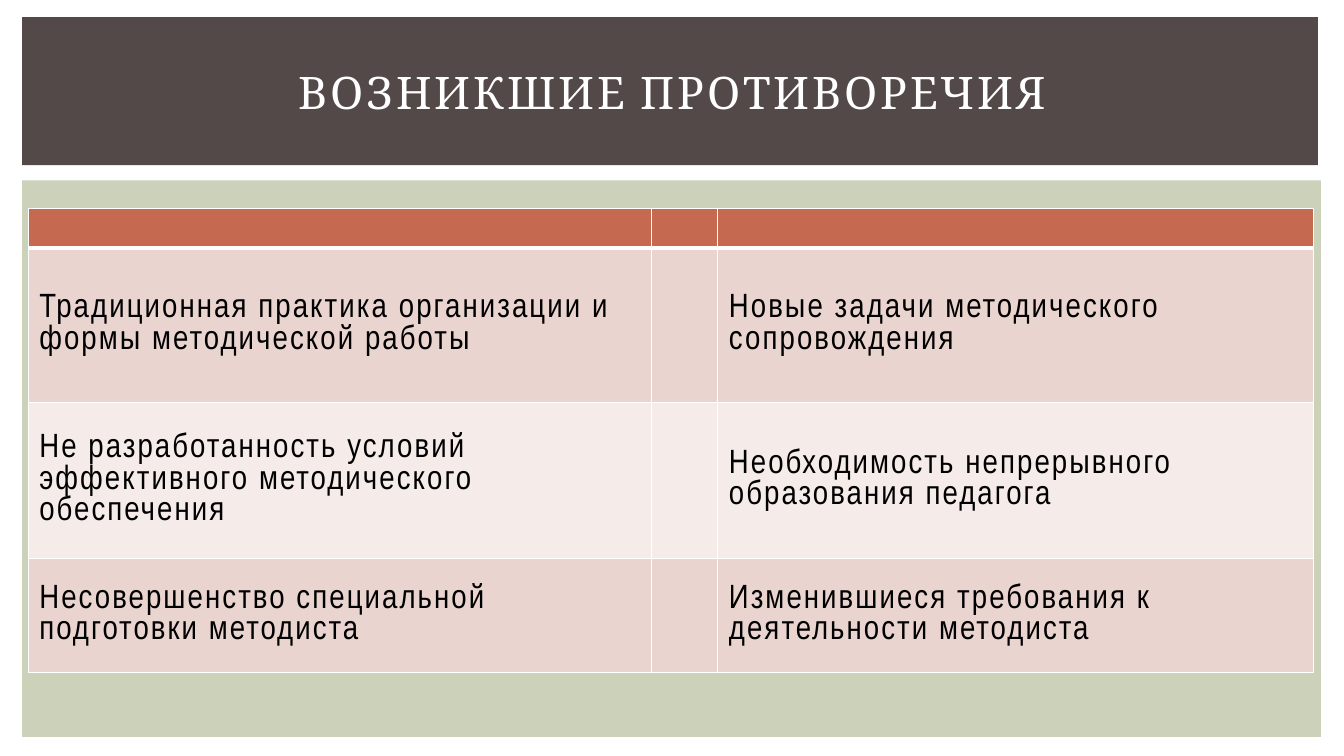
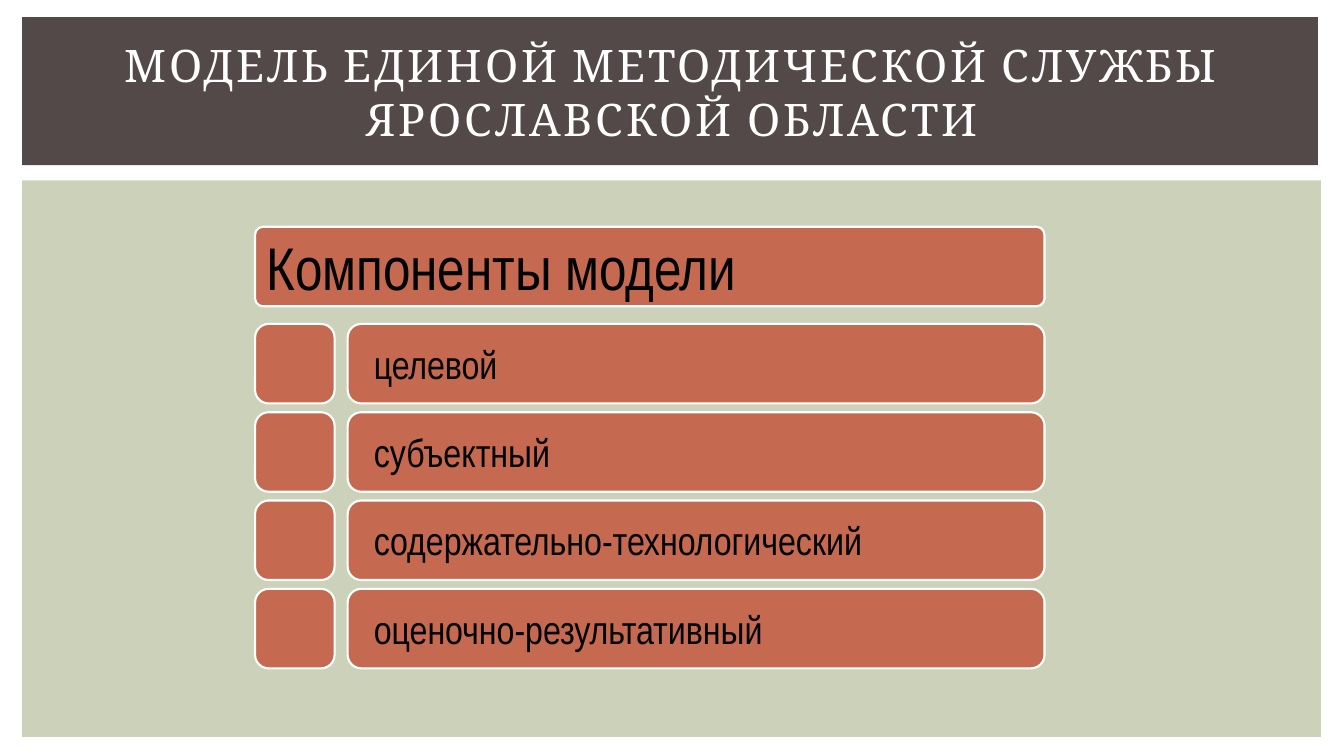
import collections

import pptx
import pptx.dml.color
import pptx.enum.shapes
import pptx.enum.text
import pptx.oxml
import pptx.oxml.ns
import pptx.util

RGBColor = pptx.dml.color.RGBColor
Inches = pptx.util.Inches
Pt = pptx.util.Pt
Shapes = pptx.enum.shapes.MSO_SHAPE
Align = pptx.enum.text.PP_ALIGN
Anchor = pptx.enum.text.MSO_ANCHOR
Box = collections.namedtuple("Box", "left top width height")

WHITE = RGBColor(0xFF, 0xFF, 0xFF)
BLACK = RGBColor(0x00, 0x00, 0x00)
BROWN = RGBColor(0x53, 0x49, 0x49)
SAGE = RGBColor(0xCC, 0xD1, 0xB9)
TERRACOTTA = RGBColor(0xC6, 0x69, 0x51)
ROSE = RGBColor(0xEA, 0xD4, 0xD0)
PALE_ROSE = RGBColor(0xF5, 0xEB, 0xE9)

TITLE_FONT = "Cambria"
BODY_FONT = "Arial Narrow"

TITLE_BAND = Box(0.22, 0.17, 12.85, 1.47)
BODY_PANEL = Box(0.22, 1.79, 12.88, 5.52)
TITLE_BOX = Box(0.56, 0.27, 12.22, 1.27)
TABLE_BOX = Box(0.28, 2.07, 12.75, 4.6)
MODEL_BOX = Box(2.53, 2.25, 7.83, 4.38)

COLUMN_WIDTHS = (6.18, 0.66, 5.91)
ROW_HEIGHTS = (0.39, 1.53, 1.55, 1.13)
CONTRADICTIONS = (
    ("Традиционная практика организации и формы методической работы",
     "Новые задачи методического сопровождения"),
    ("Не разработанность условий эффективного методического обеспечения",
     "Необходимость непрерывного образования педагога"),
    ("Несовершенство специальной подготовки методиста",
     "Изменившиеся требования к деятельности методиста"),
)
COMPONENTS = ("целевой", "субъектный", "содержательно-технологический",
              "оценочно-результативный")


def emu(box):
    """Convert a box in inches to slide units."""
    return [Inches(length) for length in box]


def add_run(paragraph, text, size, font=BODY_FONT, color=BLACK, spacing=0):
    """Add one styled run, with letter spacing in points."""
    run = paragraph.add_run()
    run.text = text
    run.font.name = font
    run.font.size = Pt(size)
    run.font.color.rgb = color
    if spacing:
        run._r.get_or_add_rPr().set("spc", str(int(spacing * 100)))


def add_block(slide, kind, box, color, outline=None):
    """Add a filled shape, outlined when a colour is given."""
    shape = slide.shapes.add_shape(kind, *emu(box))
    shape.shadow.inherit = False
    shape.fill.solid()
    shape.fill.fore_color.rgb = color
    if outline is None:
        shape.line.fill.background()
    else:
        shape.line.color.rgb = outline
        shape.line.width = Pt(1.5)
    return shape


def add_card(slide, box, corner, text="", size=28, inset=0.22):
    """Add a rounded card with left-aligned text."""
    shape = add_block(slide, Shapes.ROUNDED_RECTANGLE, box, TERRACOTTA, WHITE)
    shape.adjustments[0] = corner
    if text:
        frame = shape.text_frame
        frame.word_wrap = True
        frame.vertical_anchor = Anchor.MIDDLE
        frame.margin_left = frame.margin_right = Inches(inset)
        frame.margin_top = frame.margin_bottom = Inches(0.04)
        paragraph = frame.paragraphs[0]
        paragraph.alignment = Align.LEFT
        add_run(paragraph, text, size)


def add_titled_slide(presentation, title):
    """Add a slide with the shared panel, band and title."""
    slide = presentation.slides.add_slide(presentation.slide_layouts[6])
    add_block(slide, Shapes.RECTANGLE, BODY_PANEL, SAGE)
    add_block(slide, Shapes.RECTANGLE, TITLE_BAND, BROWN)
    frame = slide.shapes.add_textbox(*emu(TITLE_BOX)).text_frame
    frame.word_wrap = True
    frame.vertical_anchor = Anchor.MIDDLE
    paragraph = frame.paragraphs[0]
    paragraph.alignment = Align.CENTER
    add_run(paragraph, title, 32, TITLE_FONT, WHITE, 2)
    return slide


def set_borders(cell, top, bottom):
    """Draw white cell borders, with top and bottom widths in points."""
    properties = cell._tc.get_or_add_tcPr()
    for side, width in (("L", 1), ("R", 1), ("T", top), ("B", bottom)):
        properties.append(pptx.oxml.parse_xml(
            f'<a:ln{side} {pptx.oxml.ns.nsdecls("a")} w="{Pt(width)}">'
            f'<a:solidFill><a:srgbClr val="{WHITE}"/></a:solidFill>'
            f'</a:ln{side}>'))


def fill_cell(cell, text, color, top, bottom):
    """Style one table cell and write its text."""
    set_borders(cell, top, bottom)
    cell.fill.solid()
    cell.fill.fore_color.rgb = color
    cell.vertical_anchor = Anchor.MIDDLE
    cell.margin_left = cell.margin_right = Inches(0.11)
    cell.margin_top = cell.margin_bottom = Inches(0.05 if text else 0)
    if text:
        paragraph = cell.text_frame.paragraphs[0]
        paragraph.space_before = Pt(4.8)
        add_run(paragraph, text, 24, spacing=1.5)


def add_contradictions(slide, box):
    """Add the table that sets practice against new demands."""
    rows = [("", "", "")] + [(old, "", new) for old, new in CONTRADICTIONS]
    table = slide.shapes.add_table(
        len(rows), len(COLUMN_WIDTHS), *emu(box)).table
    for column, width in zip(table.columns, COLUMN_WIDTHS):
        column.width = Inches(box.width * width / sum(COLUMN_WIDTHS))
    for row, height in zip(table.rows, ROW_HEIGHTS):
        row.height = Inches(box.height * height / sum(ROW_HEIGHTS))
    colors = (TERRACOTTA, ROSE, PALE_ROSE, ROSE)
    for index, (texts, color) in enumerate(zip(rows, colors)):
        top = 3 if index == 1 else 1
        bottom = 3 if index == 0 else 1
        for cell, text in zip(table.rows[index].cells, texts):
            fill_cell(cell, text, color, top, bottom)


def add_components(slide, box):
    """Add the heading card and the rows of model components."""
    side = box.height * 0.18
    pitch = box.height * 0.2
    offset = side + 0.13
    first_top = box.top + box.height - side - pitch * (len(COMPONENTS) - 1)
    add_card(slide, box._replace(height=side), 0.1,
             "Компоненты модели", 43, 0.09)
    for index, component in enumerate(COMPONENTS):
        top = first_top + index * pitch
        add_card(slide, Box(box.left, top, side, side), 0.17)
        add_card(slide, Box(box.left + offset, top, box.width - offset, side),
                 0.17, component)


def main():
    """Build and save the presentation."""
    presentation = pptx.Presentation()
    presentation.slide_width = Inches(13.33)
    presentation.slide_height = Inches(7.5)
    add_contradictions(
        add_titled_slide(presentation, "ВОЗНИКШИЕ ПРОТИВОРЕЧИЯ"), TABLE_BOX)
    add_components(
        add_titled_slide(
            presentation,
            "МОДЕЛЬ ЕДИНОЙ МЕТОДИЧЕСКОЙ СЛУЖБЫ ЯРОСЛАВСКОЙ ОБЛАСТИ"),
        MODEL_BOX)
    presentation.save("out.pptx")


if __name__ == "__main__":
    main()
